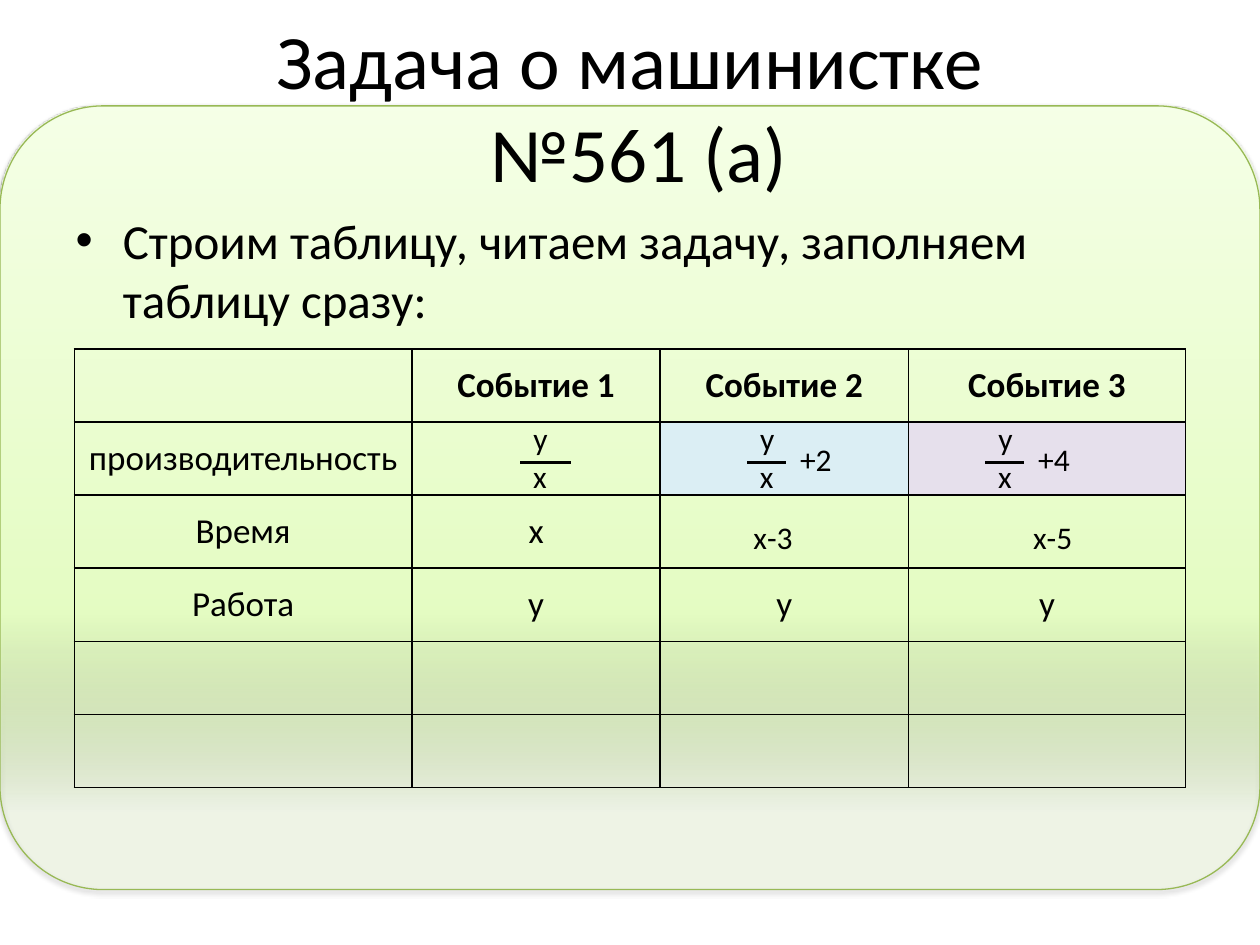
from lxml import etree
from pptx import Presentation
from pptx.dml.color import RGBColor
from pptx.enum.shapes import MSO_CONNECTOR, MSO_SHAPE
from pptx.enum.text import MSO_ANCHOR, MSO_AUTO_SIZE, PP_ALIGN
from pptx.oxml import parse_xml
from pptx.oxml.ns import nsdecls, qn
from pptx.util import Inches, Pt

CENTER = PP_ALIGN.CENTER
MIDDLE = MSO_ANCHOR.MIDDLE
FONT = "Calibri"
BLACK = "000000"

COLUMN_WIDTHS = [2.68, 1.97, 1.97, 2.2]
ROW_HEIGHT = 0.58
TABLE_ROWS = [
    ["", "Событие 1", "Событие 2", "Событие 3"],
    ["производительность", "", "", ""],
    ["Время", "х", "", ""],
    ["Работа", "у", "у", "у"],
    ["", "", "", ""],
    ["", "", "", ""],
]
CELL_FILLS = {(1, 2): "DBEEF4", (1, 3): "E6E0EC"}


def color(value):
    return RGBColor.from_string(value)


def add_run(paragraph, text, size, bold=False):
    run = paragraph.add_run()
    run.text = text
    run.font.name = FONT
    run.font.size = Pt(size)
    run.font.bold = bold
    run.font.color.rgb = color(BLACK)


def place(shape, left, top, width, height):
    shape.left, shape.top = Inches(left), Inches(top)
    shape.width, shape.height = Inches(width), Inches(height)


def add_panel(slide):
    panel = slide.shapes.add_shape(
        MSO_SHAPE.ROUNDED_RECTANGLE, 0, Inches(0.84), Inches(10), Inches(6.22))
    panel.adjustments[0] = 0.132
    panel.line.color.rgb = color("98B955")
    panel.line.width = Pt(0.75)
    properties = panel.element.spPr
    # Bottom-to-top gradient, nearly transparent at the bottom
    gradient = parse_xml(
        f'<a:gradFill {nsdecls("a")} rotWithShape="1"><a:gsLst>'
        '<a:gs pos="10000"><a:srgbClr val="DAFDA7"><a:alpha val="14000"/></a:srgbClr></a:gs>'
        '<a:gs pos="35000"><a:srgbClr val="E4FCC2"/></a:gs>'
        '<a:gs pos="100000"><a:srgbClr val="F5FFE7"/></a:gs>'
        '</a:gsLst><a:lin ang="16200000" scaled="1"/></a:gradFill>')
    properties.find(qn("a:ln")).addprevious(gradient)
    # Soft shadow below the panel
    properties.append(parse_xml(
        f'<a:effectLst {nsdecls("a")}>'
        f'<a:outerShdw blurRad="{Pt(3.1)}" dist="{Pt(1.6)}" dir="5400000" rotWithShape="0">'
        f'<a:srgbClr val="{BLACK}"><a:alpha val="38000"/></a:srgbClr>'
        '</a:outerShdw></a:effectLst>'))
    # The panel lies behind the placeholders
    panel.element.getparent().insert(2, panel.element)


def fill_title(title):
    place(title, 0.57, -0.03, 9, 1.73)
    title.text_frame.vertical_anchor = MIDDLE
    paragraph = title.text_frame.paragraphs[0]
    paragraph.alignment = CENTER
    add_run(paragraph, "Задача о машинистке ", 44)
    paragraph.add_line_break()
    add_run(paragraph, "№561 (а)", 44)


def fill_body(body):
    place(body, 0.5, 1.62, 9, 4.95)
    add_run(body.text_frame.paragraphs[0],
            "Строим таблицу, читаем задачу, заполняем таблицу сразу:", 28)


def set_borders(cell):
    properties = cell._tc.get_or_add_tcPr()
    for index, side in enumerate(("lnL", "lnR", "lnT", "lnB")):
        border = etree.Element(qn(f"a:{side}"), w=str(Pt(1)))
        fill = etree.SubElement(border, qn("a:solidFill"))
        etree.SubElement(fill, qn("a:srgbClr"), val=BLACK)
        properties.insert(index, border)


def add_task_table(slide):
    frame = slide.shapes.add_table(
        len(TABLE_ROWS), len(COLUMN_WIDTHS), Inches(0.59), Inches(2.77),
        Inches(sum(COLUMN_WIDTHS)), Inches(ROW_HEIGHT * len(TABLE_ROWS)))
    table = frame.table
    table.first_row = table.horz_banding = False
    for column, width in zip(table.columns, COLUMN_WIDTHS):
        column.width = Inches(width)
    for row_index, texts in enumerate(TABLE_ROWS):
        table.rows[row_index].height = Inches(ROW_HEIGHT)
        for column_index, text in enumerate(texts):
            cell = table.cell(row_index, column_index)
            fill = CELL_FILLS.get((row_index, column_index))
            if fill:
                cell.fill.solid()
                cell.fill.fore_color.rgb = color(fill)
            else:
                cell.fill.background()
            set_borders(cell)
            cell.vertical_anchor = MIDDLE
            if text:
                paragraph = cell.text_frame.paragraphs[0]
                paragraph.alignment = CENTER
                add_run(paragraph, text, 20, bold=row_index == 0)


def add_label(slide, text, left, top, width, wrap=True):
    box = slide.shapes.add_textbox(
        Inches(left), Inches(top), Inches(width), Inches(0.4))
    box.text_frame.word_wrap = wrap
    box.text_frame.auto_size = MSO_AUTO_SIZE.SHAPE_TO_FIT_TEXT
    paragraph = box.text_frame.paragraphs[0]
    paragraph.alignment = CENTER
    add_run(paragraph, text, 18)


def add_fraction(slide, left, bar_width):
    add_label(slide, "у", left, 3.28, 0.32, wrap=False)
    add_label(slide, "х", left, 3.58, 0.31, wrap=False)
    bar = slide.shapes.add_connector(
        MSO_CONNECTOR.STRAIGHT, Inches(left), Inches(3.67),
        Inches(left + bar_width), Inches(3.67))
    bar.line.color.rgb = color(BLACK)
    bar.line.width = Pt(1.5)
    etree.SubElement(bar.element.spPr, qn("a:effectLst"))


def main():
    presentation = Presentation()
    presentation.slide_width = Inches(10)
    presentation.slide_height = Inches(7.5)
    slide = presentation.slides.add_slide(presentation.slide_layouts[1])

    # Background, title and instruction
    add_panel(slide)
    fill_title(slide.shapes.title)
    fill_body(slide.placeholders[1])

    # Table and the expressions laid over its cells
    add_task_table(slide)
    for left, bar_width in ((4.13, 0.4), (5.93, 0.31), (7.82, 0.31)):
        add_fraction(slide, left, bar_width)
    for text, left, top, width in (
        ("+2", 6.24, 3.44, 0.47),
        ("+4", 8.13, 3.44, 0.47),
        ("х-3", 5.79, 4.06, 0.69),
        ("х-5", 8.01, 4.06, 0.69),
    ):
        add_label(slide, text, left, top, width)

    presentation.save("out.pptx")


if __name__ == "__main__":
    main()
